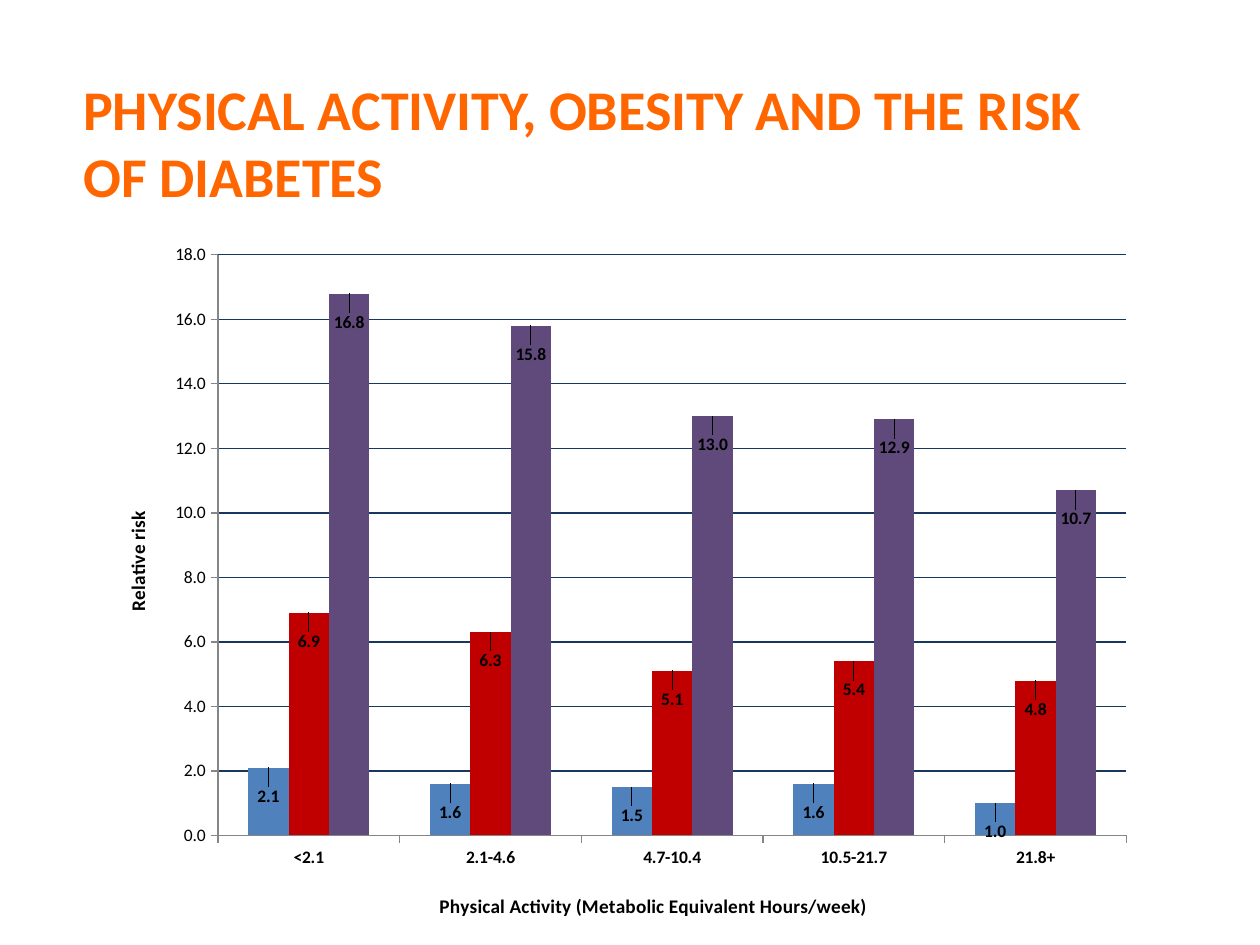
from lxml.etree import SubElement
from pptx import Presentation
from pptx.chart.data import CategoryChartData
from pptx.dml.color import RGBColor
from pptx.enum.chart import XL_CHART_TYPE, XL_LABEL_POSITION, XL_TICK_MARK
from pptx.enum.text import MSO_ANCHOR, PP_ALIGN
from pptx.oxml.ns import qn
from pptx.util import Inches, Pt

ACTIVITY_LEVELS = ["<2.1", "2.1-4.6", "4.7-10.4", "10.5-21.7", "21.8+"]
RISK_SERIES = [
    ("Series 1", "4F81BD", [2.1, 1.6, 1.5, 1.6, 1.0]),
    ("Series 2", "C00000", [6.9, 6.3, 5.1, 5.4, 4.8]),
    ("Series 3", "604A7B", [16.8, 15.8, 13.0, 12.9, 10.7]),
]


def rgb(hex_color):
    return RGBColor.from_string(hex_color)


def format_font(font, size, color="000000", bold=False, name="Calibri"):
    font.name, font.size, font.bold = name, Pt(size), bold
    font.color.rgb = rgb(color)


def write_text(frame, text, align=None, **font_format):
    frame.text = text
    for paragraph in frame.paragraphs:
        paragraph.alignment = align
        for run in paragraph.runs:
            format_font(run.font, **font_format)


def set_layout(parent, after, **settings):
    """Give a chart part a manual layout, placed after the named child."""
    for old_layout in parent.findall(qn("c:layout")):
        parent.remove(old_layout)
    layout = SubElement(parent, qn("c:layout"))
    manual = SubElement(layout, qn("c:manualLayout"))
    for tag, value in settings.items():
        SubElement(manual, qn(f"c:{tag}")).set("val", str(value))
    parent.find(qn(f"c:{after}")).addnext(layout)


class RiskSlide:
    title_color = "FF6600"
    grid_color = "17375E"
    axis_color = "868686"

    def __init__(self, presentation):
        self.slide = presentation.slides.add_slide(presentation.slide_layouts[5])

    def add_title(self, text, left, top, width, height):
        title = self.slide.shapes.title
        title.left, title.top = Inches(left), Inches(top)
        title.width, title.height = Inches(width), Inches(height)
        title.text_frame.word_wrap = True
        title.text_frame.vertical_anchor = MSO_ANCHOR.MIDDLE
        write_text(title.text_frame, text, align=PP_ALIGN.LEFT,
                   size=32, color=self.title_color, bold=True)

    def add_column_chart(self, categories, series_rows, left, top, width, height):
        data = CategoryChartData(number_format="0.0")
        data.categories = categories
        for name, _, values in series_rows:
            data.add_series(name, values)
        chart = self.slide.shapes.add_chart(
            XL_CHART_TYPE.COLUMN_CLUSTERED, Inches(left), Inches(top),
            Inches(width), Inches(height), data).chart
        chart.has_legend = chart.has_title = False
        format_font(chart.font, 10)
        plot = chart.plots[0]
        plot.gap_width, plot.overlap, plot.vary_by_categories = 150, 0, False
        for series, (_, color, values) in zip(plot.series, series_rows):
            series.format.fill.solid()
            series.format.fill.fore_color.rgb = rgb(color)
            self.label_columns(series, len(values))
        return chart

    def label_columns(self, series, count):
        labels = series.data_labels
        labels.show_value = True
        labels.number_format, labels.number_format_is_linked = "0.0", False
        labels.position = XL_LABEL_POSITION.INSIDE_END
        format_font(labels.font, 10, bold=True)
        for index in range(count):
            label = series.points[index].data_label
            format_font(label.font, 10, bold=True)
            label.position = XL_LABEL_POSITION.INSIDE_END
        for label_xml in series.data_labels._element.findall(qn("c:dLbl")):
            set_layout(label_xml, "idx", x=0, y=0.02)

    def style_axis(self, axis, title, x, y, bold=False):
        write_text(axis.axis_title.text_frame, title, size=11, bold=True)
        set_layout(axis.axis_title._element, "tx",
                   xMode="edge", yMode="edge", x=x, y=y)
        axis.major_tick_mark = XL_TICK_MARK.OUTSIDE
        axis.minor_tick_mark = XL_TICK_MARK.NONE
        axis.format.line.color.rgb = rgb(self.axis_color)
        format_font(axis.tick_labels.font, 10, bold=bold)

    def scale_values(self, axis, maximum, step):
        axis.minimum_scale, axis.maximum_scale, axis.major_unit = 0, maximum, step
        axis.tick_labels.number_format = "0.0"
        axis.tick_labels.number_format_is_linked = False
        axis.has_major_gridlines = True
        axis.major_gridlines.format.line.color.rgb = rgb(self.grid_color)
        axis.major_gridlines.format.line.width = Pt(0.75)


def main():
    presentation = Presentation()
    presentation.slide_width, presentation.slide_height = Inches(10), Inches(7.5)
    page = RiskSlide(presentation)
    page.add_title("PHYSICAL ACTIVITY, OBESITY AND THE RISK \vOF DIABETES",
                   0.56, 0.33, 10, 1.59)
    chart = page.add_column_chart(ACTIVITY_LEVELS, RISK_SERIES, 0.56, 1.94, 10, 5.5)
    page.style_axis(chart.category_axis,
                    "Physical Activity (Metabolic Equivalent Hours/week)",
                    x=0.29, y=0.93, bold=True)
    page.style_axis(chart.value_axis, "Relative risk", x=0.04, y=0.38)
    page.scale_values(chart.value_axis, maximum=18, step=2)
    plot_area = chart.plots[0]._element.getparent()
    if plot_area.find(qn("c:layout")) is None:
        plot_area.insert(0, plot_area.makeelement(qn("c:layout")))
    manual = SubElement(plot_area.find(qn("c:layout")), qn("c:manualLayout"))
    for tag, value in {"layoutTarget": "inner", "xMode": "edge", "yMode": "edge",
                       "x": 0.117, "y": 0.015, "w": 0.721, "h": 0.838}.items():
        SubElement(manual, qn(f"c:{tag}")).set("val", str(value))
    presentation.save("out.pptx")


if __name__ == "__main__":
    main()
